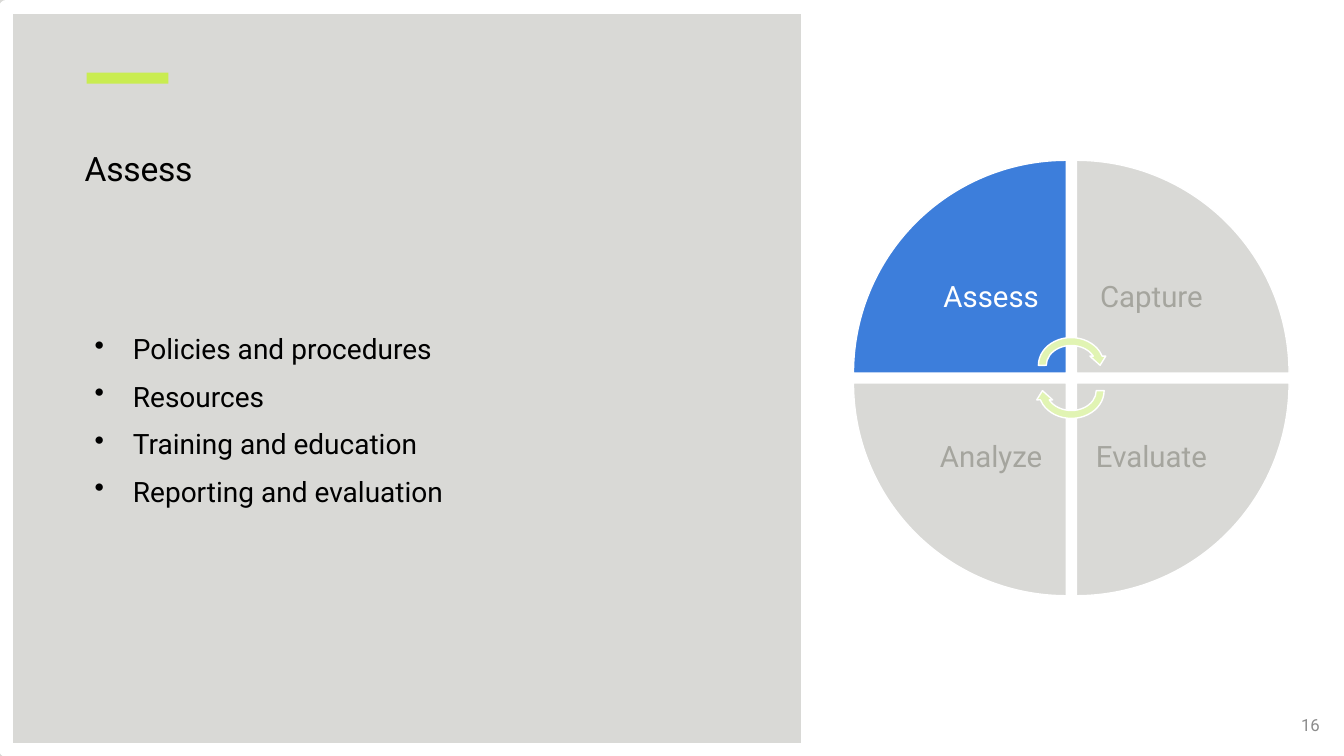
from lxml.etree import SubElement
from pptx import Presentation
from pptx.dml.color import RGBColor
from pptx.enum.shapes import MSO_CONNECTOR as Connector, MSO_SHAPE as Shape
from pptx.enum.text import MSO_ANCHOR as Anchor, PP_ALIGN as Align
from pptx.oxml.ns import qn
from pptx.util import Inches, Pt

TITLE = "Assess"
TOPICS = [
    "Policies and procedures",
    "Resources",
    "Training and education",
    "Reporting and evaluation",
]
PAGE_NUMBER = "16"
STAGES = [
    ("Assess", -1, -1, 0, "active", "white"),
    ("Capture", 1, -1, 90, "panel", "muted"),
    ("Evaluate", 1, 1, 180, "panel", "muted"),
    ("Analyze", -1, 1, 270, "panel", "muted"),
]
ARROWS = [(-1, 0), (1, 180)]
COLORS = {
    "white": "FFFFFF",
    "black": "000000",
    "panel": "D9D9D6",
    "accent": "C9EC51",
    "active": "3D7EDB",
    "muted": "A5A59E",
    "arrow": "E1F4B3",
    "number": "8C8C8C",
}
FONT = "Roboto"
WIDTH, HEIGHT = 13.33, 7.5
PANEL_WIDTH = 8.01
MARGIN = 0.84
WHEEL_X, WHEEL_Y = 10.625, HEIGHT / 2
WEDGE, GAP, LABEL = 2.11, 0.1, 1.49
LABEL_INSET = 0.16
ARROW_WIDTH, ARROW_HEIGHT, ARROW_SHIFT = 0.73, 0.63, 0.125

deck = Presentation()
deck.slide_width, deck.slide_height = Inches(WIDTH), Inches(HEIGHT)
slide = deck.slides.add_slide(deck.slide_layouts[6])


def color(name):
    return RGBColor.from_string(COLORS[name])


def box(*lengths):
    return [Inches(length) for length in lengths]


def draw(kind, place, fill=None, line=None, weight=1, rotation=0):
    shape = slide.shapes.add_shape(kind, *box(*place))
    shape.shadow.inherit = False
    shape.rotation = rotation
    if fill:
        shape.fill.solid()
        shape.fill.fore_color.rgb = color(fill)
    else:
        shape.fill.background()
    if line:
        shape.line.color.rgb = color(line)
        shape.line.width = Pt(weight)
    else:
        shape.line.fill.background()
    return shape


def write(lines, place, size, ink, align=Align.LEFT, anchor=Anchor.TOP,
          insets=(0.1, 0.05), bullet=False):
    frame = slide.shapes.add_textbox(*box(*place)).text_frame
    frame.word_wrap = True
    frame.vertical_anchor = anchor
    frame.margin_left = frame.margin_right = Inches(insets[0])
    frame.margin_top = frame.margin_bottom = Inches(insets[1])
    frame.text = "\n".join(lines)
    for index, paragraph in enumerate(frame.paragraphs):
        paragraph.alignment = align
        if bullet:
            properties = paragraph._p.get_or_add_pPr()
            properties.set("marL", str(Inches(0.38)))
            properties.set("indent", str(Inches(-0.38)))
            if index:
                paragraph.space_before = Pt(10)
            SubElement(properties, qn("a:buChar")).set("char", "•")
        paragraph.font.size = Pt(size)
        paragraph.font.name = FONT
        paragraph.font.color.rgb = color(ink)
    return frame


def quadrant(side_x, side_y, size):
    return [
        center + (GAP / 2 if side > 0 else -GAP / 2 - size)
        for center, side in ((WHEEL_X, side_x), (WHEEL_Y, side_y))
    ] + [size, size]


draw(Shape.RECTANGLE, (0, 0, PANEL_WIDTH, HEIGHT), "panel")
draw(Shape.RECTANGLE, (0.86, 0.72, 0.81, 0.11), "accent")
divider = slide.shapes.add_connector(
    Connector.STRAIGHT, *box(PANEL_WIDTH, 0.09, PANEL_WIDTH, 7.44))
divider.line.color.rgb = color("white")
divider.line.width = Pt(9.5)
SubElement(divider._element.spPr, qn("a:effectLst"))
draw(Shape.RECTANGLE, (0.06, 0.07, 13.18, 7.37), line="white", weight=9.5)

write(TOPICS, (MARGIN, 3.24, 5.06, 3.6), 20, "black", bullet=True)
title = write([TITLE], (MARGIN, 1.47, 6.12, 1.64), 24, "black", insets=(0, 0))
title.paragraphs[0].runs[0]._r.get_or_add_rPr().set("spc", "-20")
write([PAGE_NUMBER], (10.19, 6.99, 3, 0.4), 12, "number", Align.RIGHT, Anchor.MIDDLE)

for name, side_x, side_y, rotation, fill, ink in STAGES:
    draw(Shape.PIE_WEDGE, quadrant(side_x, side_y, WEDGE), fill, "white",
         rotation=rotation)
    label = write([name], quadrant(side_x, side_y, LABEL), 21, ink, Align.CENTER,
                  Anchor.MIDDLE, (LABEL_INSET, LABEL_INSET))
    label.paragraphs[0].line_spacing = 0.9

for side, rotation in ARROWS:
    draw(Shape.CIRCULAR_ARROW,
         (WHEEL_X - ARROW_WIDTH / 2,
          WHEEL_Y + side * ARROW_SHIFT - ARROW_HEIGHT / 2,
          ARROW_WIDTH, ARROW_HEIGHT),
         "arrow", "white", rotation=rotation)

deck.save("out.pptx")
